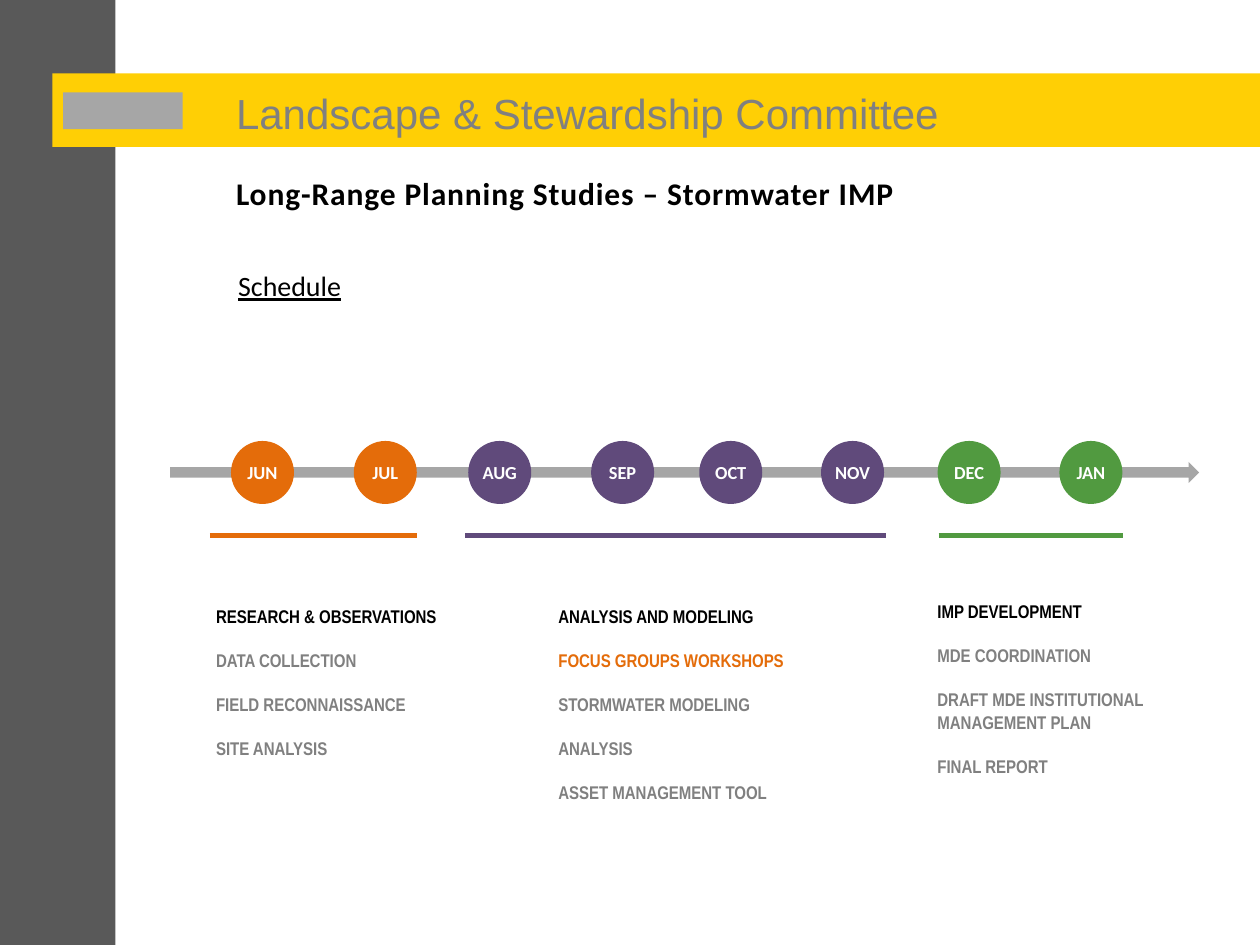
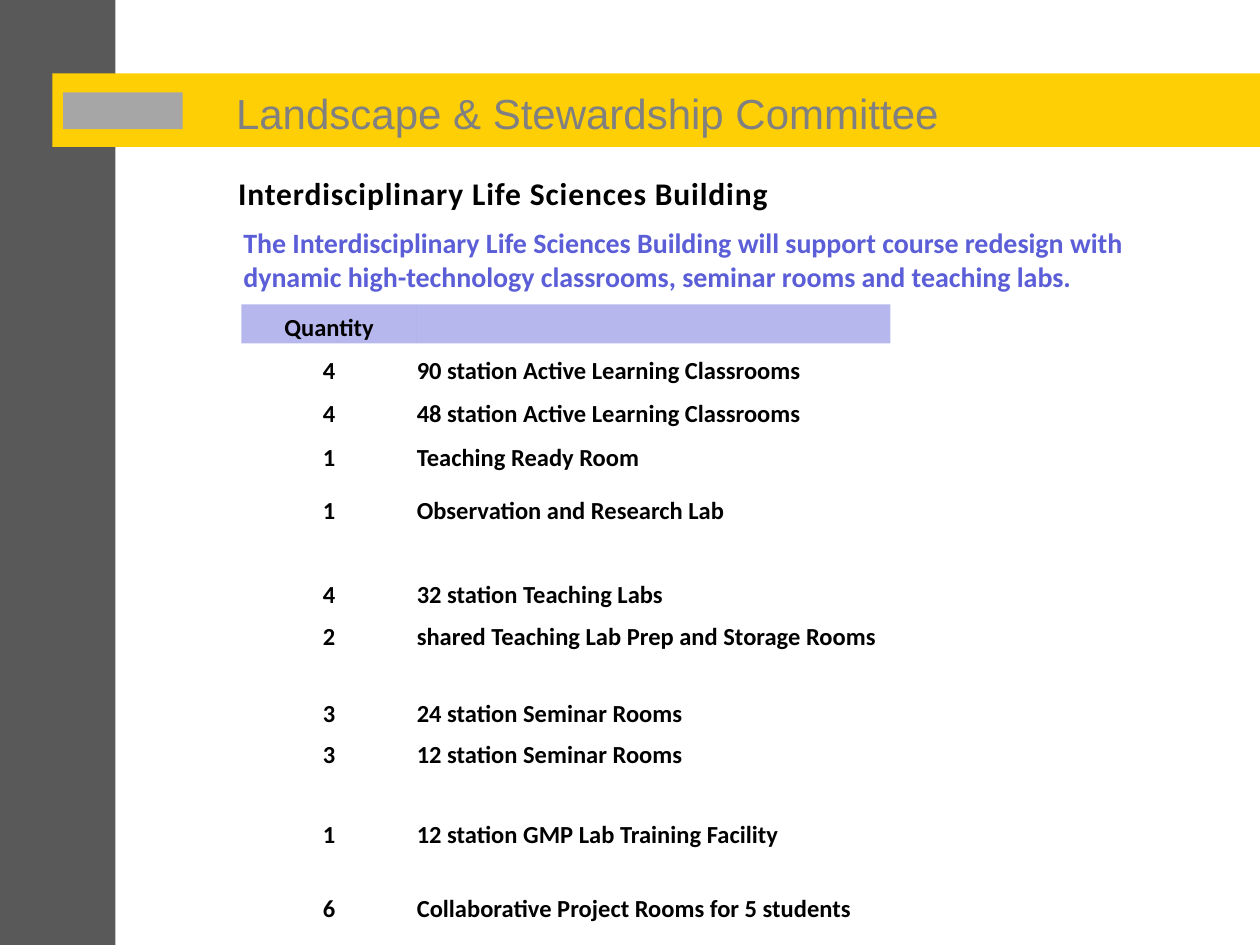
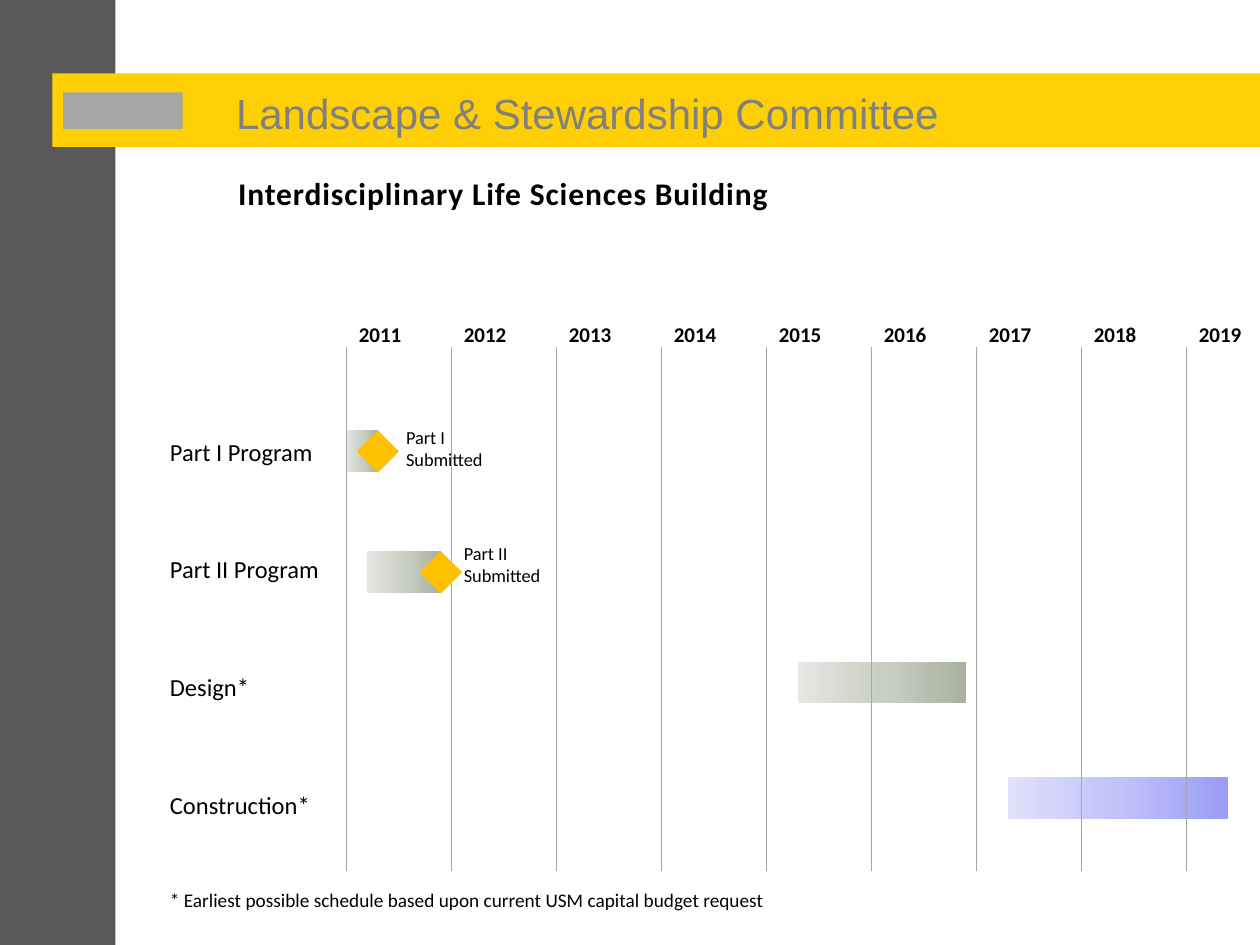
from copy import deepcopy
from dataclasses import dataclass

from lxml import etree
from pptx import Presentation
from pptx.dml.color import RGBColor
from pptx.enum import shapes, text
from pptx.oxml.ns import qn
from pptx.util import Inches, Pt

COLUMNS, ROWS = 120, 90
PLAIN_TABLE = "{2D5ABB26-0587-4C30-8999-92F81FD0307C}"


@dataclass(frozen=True)
class Theme:
    sidebar: str = "595959"
    band: str = "FFCF05"
    silver: str = "A6A6A6"
    gray: str = "808080"
    black: str = "000000"
    white: str = "FFFFFF"
    orange: str = "E46C0A"
    purple: str = "604A7B"
    green: str = "519A40"
    indigo: str = "5B5ED7"
    header: str = "8688E2"
    milestone: str = "FFC000"
    sage_gradient: tuple = ("A9B19E", "CACFC4", "E5E7E3")
    blue_gradient: tuple = ("9A9CF7", "C1C2F9", "E1E1FB")
    body_font: str = "Calibri"
    title_font: str = "Arial"
    list_font: str = "Arial Narrow"
    title_size: float = 24
    heading_size: float = 18
    lead_size: float = 16
    body_size: float = 14
    year_size: float = 12
    note_size: float = 11
    small_size: float = 10.5


THEME = Theme()


def write(paragraph, content, size=THEME.body_size, font=THEME.body_font, color=THEME.black,
          bold=False, underline=False, tracking=0, align=None, before=None):
    paragraph.alignment = align
    paragraph.space_before = before
    run = paragraph.add_run()
    run.text = content
    run.font.size = Pt(size)
    run.font.name = font
    run.font.bold = bold
    run.font.underline = underline
    run.font.color.rgb = RGBColor.from_string(color)
    if tracking:
        run.font._element.set("spc", str(int(tracking * 100)))


class Deck:
    def __init__(self, theme):
        self.theme = theme
        self.presentation = Presentation()
        self.presentation.slide_width = Inches(10)
        self.presentation.slide_height = Inches(7.5)
        self.slide = None

    def x(self, columns):
        return round(self.presentation.slide_width * columns / COLUMNS)

    def y(self, rows):
        return round(self.presentation.slide_height * rows / ROWS)

    def box(self, left, top, width, height):
        return self.x(left), self.y(top), self.x(width), self.y(height)

    def new_slide(self, heading, left=21.5, width=54.6):
        theme = self.theme
        self.slide = self.presentation.slides.add_slide(self.presentation.slide_layouts[6])
        self.shape("RECTANGLE", 0, 0, 11, ROWS, theme.sidebar)
        self.shape("RECTANGLE", 5, 7, 115, 7, theme.band)
        self.shape("RECTANGLE", 6, 8.8, 11.4, 3.5, theme.silver)
        self.text("Landscape & Stewardship Committee", 21.3, 7.7, 95, 6,
                  size=theme.title_size, font=theme.title_font, color=theme.gray)
        self.text(heading, left, 16, width, 4.8, size=theme.heading_size, bold=True, tracking=0.5)

    def shape(self, kind, left, top, width, height, color):
        shape = self.slide.shapes.add_shape(
            getattr(shapes.MSO_SHAPE, kind), *self.box(left, top, width, height))
        shape.shadow.inherit = False
        shape.line.fill.background()
        shape.fill.solid()
        shape.fill.fore_color.rgb = RGBColor.from_string(color)
        return shape

    def gradient_bar(self, left, top, width, height, colors):
        bar = self.shape("RECTANGLE", left, top, width, height, colors[0])
        bar.fill.gradient()
        stop_list = bar._element.spPr.find(".//" + qn("a:gsLst"))
        stop_list.insert(1, deepcopy(stop_list[0]))
        for stop, color, position in zip(bar.fill.gradient_stops, colors, (0, 0.5, 1)):
            stop.color.rgb = RGBColor.from_string(color)
            stop.position = position
        bar.fill.gradient_angle = 180

    def badge(self, label, left, top, size, color):
        frame = self.shape("OVAL", left, top, size, size, color).text_frame
        frame.margin_left = frame.margin_right = frame.margin_top = frame.margin_bottom = 0
        frame.word_wrap = False
        frame.vertical_anchor = text.MSO_ANCHOR.MIDDLE
        write(frame.paragraphs[0], label, size=self.theme.small_size, color=self.theme.white,
              bold=True, align=text.PP_ALIGN.CENTER)

    def text(self, content, left, top, width, height, **style):
        self.paragraphs([(content, style.pop("color", self.theme.black))],
                        left, top, width, height, **style)

    def paragraphs(self, lines, left, top, width, height, gap=0, **style):
        frame = self.slide.shapes.add_textbox(*self.box(left, top, width, height)).text_frame
        frame.word_wrap = True
        frame.auto_size = text.MSO_AUTO_SIZE.SHAPE_TO_FIT_TEXT
        for index, (content, color) in enumerate(lines):
            paragraph = frame.add_paragraph() if index else frame.paragraphs[0]
            write(paragraph, content, color=color, before=Pt(gap) if index else None, **style)

    def line(self, start, end, color, weight):
        connector = self.slide.shapes.add_connector(
            shapes.MSO_CONNECTOR.STRAIGHT, self.x(start[0]), self.y(start[1]),
            self.x(end[0]), self.y(end[1]))
        connector.line.color.rgb = RGBColor.from_string(color)
        connector.line.width = Pt(weight)
        etree.SubElement(connector._element.spPr, qn("a:effectLst"))

    def table(self, rows, left, top, widths):
        height = sum(row[0] for row in rows)
        table = self.slide.shapes.add_table(
            len(rows), len(widths), *self.box(left, top, sum(widths), height)).table
        table.first_row = table.horz_banding = False
        table._tbl.tblPr.find(qn("a:tableStyleId")).text = PLAIN_TABLE
        for column, width in zip(table.columns, widths):
            column.width = self.x(width)
        for row, (row_height, *values) in zip(table.rows, rows):
            row.height = self.y(row_height)
            for cell, value, align in zip(row.cells, values, (text.PP_ALIGN.CENTER, None)):
                self.cell(cell, value, align)
        for cell in table.rows[0].cells:
            cell.fill.solid()
            cell.fill.fore_color.rgb = RGBColor.from_string(self.theme.header)
            color = cell._tc.tcPr.find(".//" + qn("a:srgbClr"))
            etree.SubElement(color, qn("a:alpha")).set("val", "60000")

    def cell(self, cell, value, align):
        cell.margin_left = cell.margin_right = cell.margin_top = cell.margin_bottom = 0
        cell.vertical_anchor = text.MSO_ANCHOR.BOTTOM
        cell.fill.background()
        paragraph = cell.text_frame.paragraphs[0]
        if value:
            write(paragraph, value, bold=True, align=align)
        else:
            paragraph._p.get_or_add_endParaRPr().set("sz", "1000")


def stormwater_schedule(deck):
    theme = deck.theme
    deck.new_slide("Long-Range Planning Studies – Stormwater IMP", left=21.3, width=91.8)
    deck.text("Schedule", 21.5, 25, 92, 4.4, size=theme.lead_size, underline=True)
    deck.shape("RIGHT_ARROW", 16.2, 44, 98, 2, theme.silver)
    phases = [
        (theme.orange, (20, 39.7), {"JUN": 22, "JUL": 33.7}, (19.4, 57),
         ["RESEARCH & OBSERVATIONS", "DATA COLLECTION", "FIELD RECONNAISSANCE", "SITE ANALYSIS"]),
        (theme.purple, (44.3, 84.4), {"AUG": 44.6, "SEP": 56.3, "OCT": 66.6, "NOV": 78.2}, (52, 57),
         ["ANALYSIS AND MODELING", "FOCUS GROUPS WORKSHOPS", "STORMWATER MODELING", "ANALYSIS",
          "ASSET MANAGEMENT TOOL"]),
        (theme.green, (89.4, 107), {"DEC": 89.3, "JAN": 100.9}, (88.1, 56.6),
         ["IMP DEVELOPMENT", "MDE COORDINATION", "DRAFT MDE INSTITUTIONAL MANAGEMENT PLAN",
          "FINAL REPORT"]),
    ]
    highlights = {"FOCUS GROUPS WORKSHOPS": theme.orange}
    for color, (start, end), months, (left, top), (name, *tasks) in phases:
        for month, month_left in months.items():
            deck.badge(month, month_left, 42, 6, color)
        deck.line((start, 51), (end, 51), color, 3)
        lines = [(name, theme.black)]
        lines += [(task, highlights.get(task, theme.gray)) for task in tasks]
        deck.paragraphs(lines, left, top, 24.8, 18, gap=12.6, size=theme.small_size,
                        font=theme.list_font, bold=True)


def building_rooms(deck):
    theme = deck.theme
    deck.new_slide("Interdisciplinary Life Sciences Building")
    deck.text("The Interdisciplinary Life Sciences Building will support course redesign with "
              "dynamic high-technology classrooms, seminar rooms and teaching labs.",
              22, 20.9, 96, 7.6, size=theme.lead_size, color=theme.indigo, bold=True)
    rooms = [
        (3.7, "Quantity", ""),
        (4.1, "4", "90 station Active Learning Classrooms"),
        (4.1, "4", "48 station Active Learning Classrooms"),
        (4.2, "1", "Teaching Ready Room"),
        (5, "1", "Observation and Research Lab"),
        (3, "", ""),
        (5, "4", "32 station Teaching Labs"),
        (4, "2", "shared Teaching Lab Prep and Storage Rooms"),
        (3, "", ""),
        (4.3, "3", "24 station Seminar Rooms"),
        (4, "3", "12 station Seminar Rooms"),
        (2.8, "", ""),
        (4.8, "1", "12 station GMP Lab Training Facility"),
        (2.8, "", ""),
        (4.2, "6", "Collaborative Project Rooms for 5 students"),
    ]
    deck.table(rooms, 23, 29, (16.7, 45.1))


def building_timeline(deck):
    theme = deck.theme
    deck.new_slide("Interdisciplinary Life Sciences Building")
    stages = ["Part I Program", "Part II Program", "Design*", "Construction*"]
    deck.paragraphs([(stage, theme.black) for stage in stages], 15, 41, 20, 38, gap=50.4)
    bars = [
        (33, 41, 3, theme.sage_gradient),
        (35, 52.5, 7, theme.sage_gradient),
        (76, 63, 16, theme.sage_gradient),
        (96, 74, 21, theme.blue_gradient),
    ]
    for left, top, width, colors in bars:
        deck.gradient_bar(left, top, width, 4, colors)
    for index, year in enumerate(range(2011, 2020)):
        left = 33 + 10 * index
        deck.line((left, 33), (left, 83), theme.silver, 0.75)
        deck.text(str(year), left, 30, min(11, COLUMNS - left), 3.6, size=theme.year_size, bold=True)
    milestones = [
        ("Part I Submitted", 34, 41, 37.5, 40),
        ("Part II Submitted", 40, 52.5, 43, 51),
    ]
    for label, left, top, label_left, label_top in milestones:
        deck.shape("DIAMOND", left, top, 4, 4, theme.milestone)
        deck.text(label, label_left, label_top, 11, 5.4, size=theme.small_size)
    deck.text("* Earliest possible schedule based upon current USM capital budget request",
              15, 84, 105, 3.5, size=theme.note_size)


def main():
    deck = Deck(THEME)
    stormwater_schedule(deck)
    building_rooms(deck)
    building_timeline(deck)
    deck.presentation.save("out.pptx")


if __name__ == "__main__":
    main()
